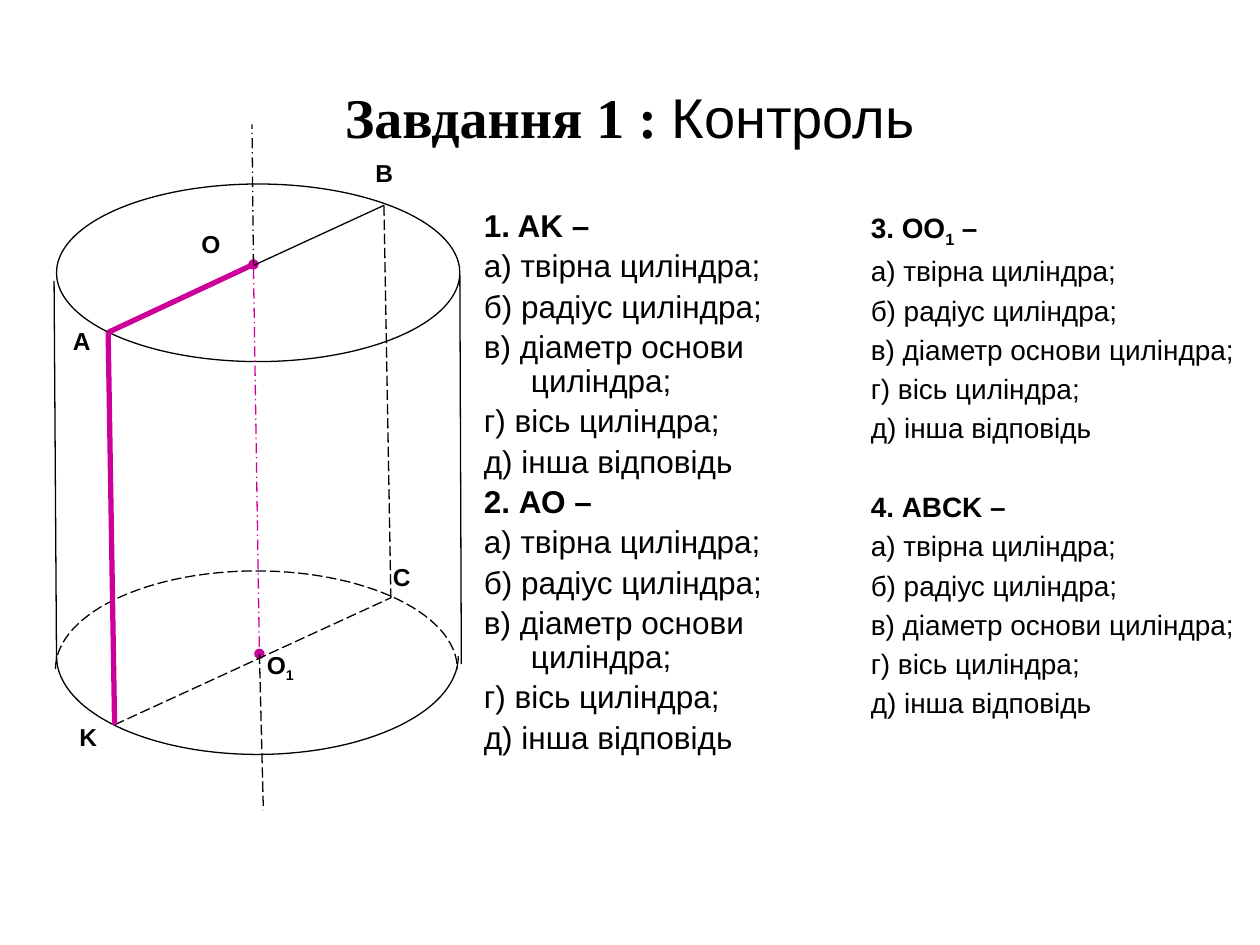
from math import cos, pi, sin

from lxml import etree
from pptx import Presentation
from pptx.dml.color import RGBColor
from pptx.enum.dml import MSO_LINE
from pptx.enum.shapes import MSO_CONNECTOR, MSO_SHAPE
from pptx.enum.text import MSO_ANCHOR, MSO_AUTO_SIZE, PP_ALIGN
from pptx.oxml.ns import qn
from pptx.util import Cm, Pt

STRAIGHT = MSO_CONNECTOR.STRAIGHT
OVAL = MSO_SHAPE.OVAL
DASH = MSO_LINE.LONG_DASH
DASH_DOT = MSO_LINE.LONG_DASH_DOT
CENTER = PP_ALIGN.CENTER
MIDDLE = MSO_ANCHOR.MIDDLE
NO_AUTOFIT = MSO_AUTO_SIZE.NONE

COLORS = {"ink": "000000", "paper": "FFFFFF", "accent": "CC0099"}
ANSWERS = [
    "а) твірна циліндра;",
    "б) радіус циліндра;",
    "в) діаметр основи циліндра;",
    "г) вісь циліндра;",
    "д) інша відповідь",
]
POINTS = {
    "A": (1.09, 4.19), "B": (6.65, 1.63), "C": (6.79, 9.54), "K": (1.22, 12.1),
    "O": (4.02, 2.82), "O1": (4.14, 10.67),
    "axis top": (3.99, 0), "axis bottom": (4.22, 13.82),
    "left top": (0, 3.15), "left bottom": (0.05, 10.88),
    "right top": (8.18, 3.03), "right bottom": (8.21, 10.88),
}
SEGMENTS = [
    ("left top", "left bottom", "ink", 0.75, None),
    ("right top", "right bottom", "ink", 0.75, None),
    ("O", "axis top", "ink", 0.75, DASH_DOT),
    ("O1", "axis bottom", "ink", 0.75, DASH),
    ("A", "B", "ink", 0.75, None),
    ("K", "C", "ink", 0.75, DASH),
    ("B", "C", "ink", 0.75, DASH),
    ("A", "K", "accent", 3, None),
    ("O", "A", "accent", 3, None),
]
LABELS = [
    ("A", "", 0.13, 3.94, 1.27),
    ("B", "", 6.23, 0.56, 1.42),
    ("C", "", 6.58, 8.69, 1.5),
    ("K", "", 0.26, 11.92, 1.5),
    ("O", "", 2.72, 1.99, 1.35),
    ("O", "1", 4.04, 10.47, 1.83),
]


def color(name):
    return RGBColor.from_string(COLORS[name])


def add_run(paragraph, text, size, bold=False, font="Arial", subscript=False):
    run = paragraph.add_run()
    run.text = text
    run.font.name = font
    run.font.size = Pt(size)
    run.font.bold = bold
    run.font.color.rgb = color("ink")
    if subscript:
        run._r.get_or_add_rPr().set("baseline", "-25000")


def place(shape, left, top, width, height):
    shape.left, shape.top = Cm(left), Cm(top)
    shape.width, shape.height = Cm(width), Cm(height)


def style_line(shape, name, width, dash):
    shape.line.color.rgb = color(name)
    shape.line.width = Pt(width)
    if dash is not None:
        shape.line.dash_style = dash


def fill_title(title, left, top, width, height):
    place(title, left, top, width, height)
    title.text_frame.auto_size = NO_AUTOFIT
    title.text_frame.vertical_anchor = MIDDLE
    paragraph = title.text_frame.paragraphs[0]
    paragraph.alignment = CENTER
    add_run(paragraph, "Завдання 1 : ", 32, True, "Times New Roman")
    add_run(paragraph, "Контроль", 32)


def fill_questions(body, left, top, width, height, questions, size, spacing, gap):
    place(body, left, top, width, height)
    frame = body.text_frame
    frame.auto_size = NO_AUTOFIT
    rows = []
    for heading in questions:
        rows.append((heading, True))
        rows += [([answer], False) for answer in ANSWERS]
    for index, (parts, bold) in enumerate(rows):
        paragraph = frame.add_paragraph() if index else frame.paragraphs[0]
        properties = paragraph._p.get_or_add_pPr()
        properties.set("marL", str(Cm(0.95)))
        properties.set("indent", str(-Cm(0.95)))
        etree.SubElement(properties, qn("a:buNone"))
        paragraph.line_spacing = spacing
        if index == 0:
            paragraph.space_before = Pt(0)
        elif bold and gap:
            paragraph.space_before = Pt(gap)
        for text in parts:
            add_run(paragraph, text, size, bold, subscript=text == "1")


def add_segment(slide, left, top, start, end, name, width, dash):
    (x1, y1), (x2, y2) = POINTS[start], POINTS[end]
    line = slide.shapes.add_connector(
        STRAIGHT, Cm(left + x1), Cm(top + y1), Cm(left + x2), Cm(top + y2))
    style_line(line, name, width, dash)
    etree.SubElement(line._element.spPr, qn("a:effectLst"))
    return line


def add_half_ellipse(slide, left, top, width, height, direction, dash):
    steps = 60
    center_y = top if direction > 0 else top + height
    points = []
    for step in range(steps + 1):
        angle = pi * step / steps
        points.append((Cm(left + width / 2 * (1 - cos(angle))),
                       Cm(center_y + direction * height * sin(angle))))
    builder = slide.shapes.build_freeform(*points[0])
    builder.add_line_segments(points[1:], close=False)
    arc = builder.convert_to_shape()
    arc.fill.background()
    arc.shadow.inherit = False
    style_line(arc, "ink", 0.75, dash)


def add_label(slide, left, top, width, height, letter, index):
    frame = slide.shapes.add_textbox(Cm(left), Cm(top), Cm(width), Cm(height)).text_frame
    frame.word_wrap = True
    add_run(frame.paragraphs[0], letter, 14, True)
    if index:
        add_run(frame.paragraphs[0], index, 14, True, subscript=True)


def draw_cylinder(slide, left, top):
    base = slide.shapes.add_shape(OVAL, Cm(left + 0.05), Cm(top + 1.2), Cm(8.13), Cm(3.58))
    base.fill.solid()
    base.fill.fore_color.rgb = color("paper")
    base.shadow.inherit = False
    style_line(base, "ink", 0.75, None)
    add_half_ellipse(slide, left + 0.05, top + 10.72, 8.1, 1.98, 1, None)
    add_half_ellipse(slide, left + 0.03, top + 9, 8.1, 1.98, -1, DASH)

    axis = add_segment(slide, left, top, "O", "O1", "accent", 0.75, DASH_DOT)
    for tag in ("a:headEnd", "a:tailEnd"):
        etree.SubElement(axis.line._get_or_add_ln(), qn(tag), type="oval")
    for segment in SEGMENTS:
        add_segment(slide, left, top, *segment)
    for letter, index, x, y, width in LABELS:
        add_label(slide, left + x, top + y, width, 1.35, letter, index)


def main():
    presentation = Presentation()
    presentation.slide_width, presentation.slide_height = Cm(25.4), Cm(19.05)
    slide = presentation.slides.add_slide(presentation.slide_layouts[3])
    title, first_body, second_body = slide.placeholders
    fill_title(title, 1.27, 0.76, 22.86, 3.18)
    fill_questions(first_body, 9.5, 4.11, 8.61, 12.57,
                   [["1. AK –"], ["2. АО –"]], 18, 0.9, None)
    fill_questions(second_body, 17.3, 4.11, 8.1, 12.57,
                   [["3. ОО", "1", " –"], ["4. АBCK –"]], 16, 1.0, 26)
    draw_cylinder(slide, 1.09, 2.51)
    presentation.save("out.pptx")


if __name__ == "__main__":
    main()
